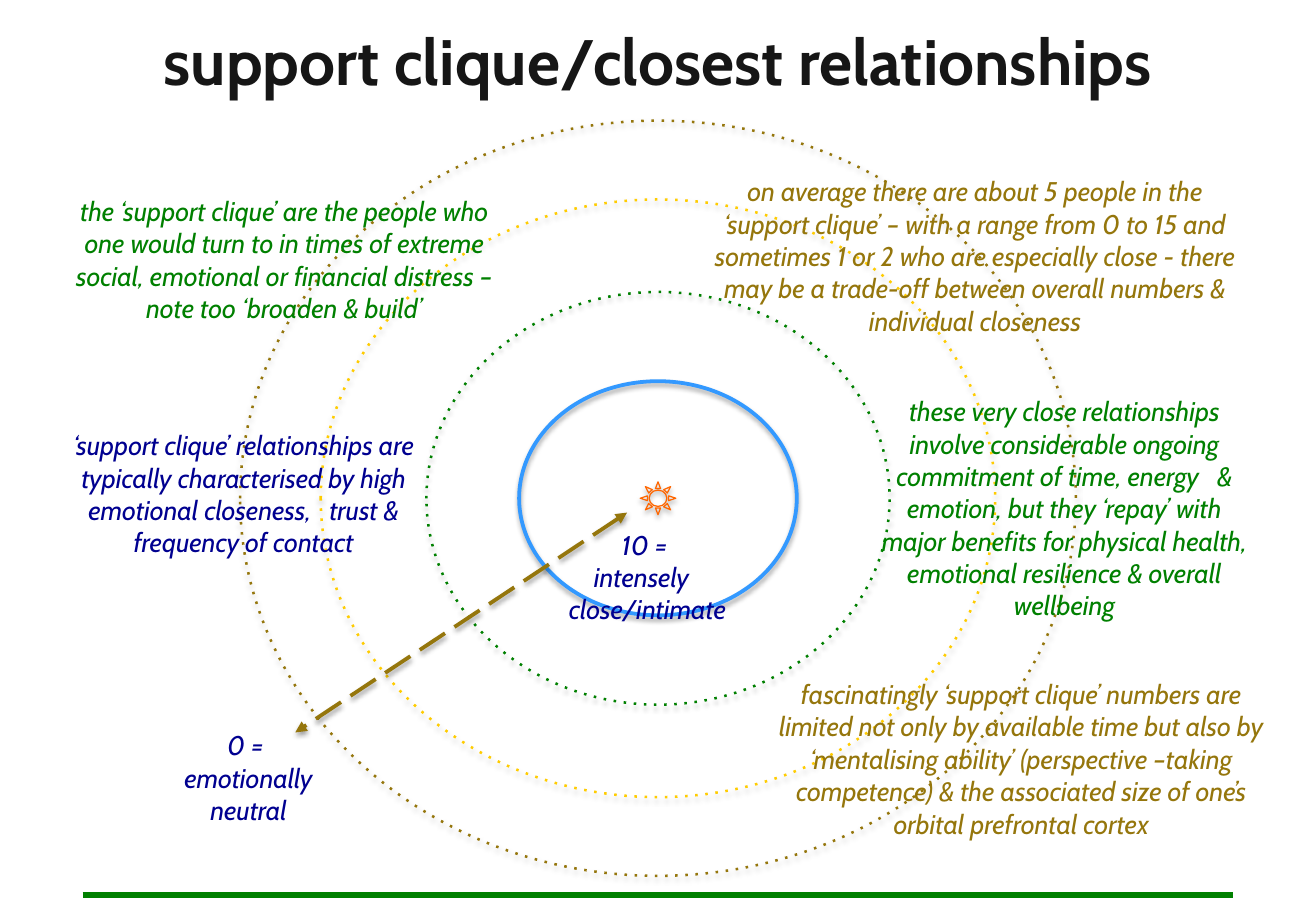
from dataclasses import dataclass

from lxml import etree
from pptx import Presentation
from pptx.dml.color import RGBColor
from pptx.enum.shapes import MSO_CONNECTOR, MSO_SHAPE
from pptx.enum.text import MSO_ANCHOR, MSO_AUTO_SIZE, PP_ALIGN
from pptx.oxml.ns import qn
from pptx.util import Emu, Inches, Pt

OVAL, SUN = MSO_SHAPE.OVAL, MSO_SHAPE.SUN
STRAIGHT = MSO_CONNECTOR.STRAIGHT
CENTER, BOTTOM = PP_ALIGN.CENTER, MSO_ANCHOR.BOTTOM
FIT_SHAPE, NO_FIT = MSO_AUTO_SIZE.SHAPE_TO_FIT_TEXT, MSO_AUTO_SIZE.NONE
TITLE_ONLY = 5


@dataclass(frozen=True)
class Theme:
    """Colours, font and type sizes of the slide."""
    font: str = "Cabin"
    title_size: float = 38
    note_size: float = 16
    ink: str = "161616"
    navy: str = "000090"
    green: str = "008000"
    bronze: str = "95760C"
    yellow: str = "FFCC00"
    blue: str = "3399FF"
    orange: str = "FF6600"


class RelationshipSlide:
    """Draws elements placed by percentages of the slide's width and height."""

    def __init__(self, deck, theme):
        """Open a title-only slide in the deck."""
        self.deck, self.theme = deck, theme
        self.slide = deck.slides.add_slide(deck.slide_layouts[TITLE_ONLY])

    def place(self, *shares):
        """Turn alternating x and y percentages into lengths."""
        sides = (self.deck.slide_width, self.deck.slide_height)
        return [Emu(round(share * sides[i % 2] / 100)) for i, share in enumerate(shares)]

    def fill_text(self, frame, lines, size, color, bold=False, italic=False):
        """Fill a text frame with centred paragraphs."""
        frame.word_wrap = True
        frame.text = "\n".join(lines)
        for paragraph in frame.paragraphs:
            paragraph.alignment = CENTER
            font = paragraph.font
            font.name, font.size = self.theme.font, Pt(size)
            font.color.rgb = RGBColor.from_string(color)
            font.bold, font.italic = bold, italic

    def title(self, heading):
        """Move and format the title placeholder."""
        title = self.slide.shapes.title
        title.left, title.top, title.width, title.height = self.place(0, 2.8, 100, 8.67)
        self.fill_text(title.text_frame, [heading], self.theme.title_size,
                       self.theme.ink, bold=True)
        title.text_frame.vertical_anchor = BOTTOM
        title.text_frame.auto_size = NO_FIT

    def note(self, box, color, *lines):
        """Add an italic note."""
        frame = self.slide.shapes.add_textbox(*self.place(*box)).text_frame
        self.fill_text(frame, lines, self.theme.note_size, color, italic=True)
        frame.auto_size = FIT_SHAPE

    def stroke(self, element, color, weight, dash=None, arrows=False, shadow=None):
        """Style an outline with its dash, arrowheads and (opacity, distance) shadow."""
        element.line.color.rgb = RGBColor.from_string(color)
        element.line.width = Pt(weight)
        properties = element._element.spPr
        outline = properties.find(qn("a:ln"))
        if dash:
            etree.SubElement(outline, qn("a:prstDash"), val=dash)
        if arrows:
            for end in ("a:headEnd", "a:tailEnd"):
                etree.SubElement(outline, qn(end), type="triangle")
        effects = etree.SubElement(properties, qn("a:effectLst"))
        if shadow:
            opacity, distance = shadow
            cast = etree.SubElement(effects, qn("a:outerShdw"), blurRad=str(Pt(3.1)),
                                    dist=str(Pt(distance)), dir="5400000", rotWithShape="0")
            shade = etree.SubElement(cast, qn("a:srgbClr"), val="000000")
            etree.SubElement(shade, qn("a:alpha"), val=str(opacity * 1000))

    def ring(self, width, height, color, weight, dash=None, kind=OVAL):
        """Add an unfilled shape around the common centre."""
        center_x, center_y = 50, 54.7
        box = self.place(center_x - width / 2, center_y - height / 2, width, height)
        ring = self.slide.shapes.add_shape(kind, *box)
        ring.fill.background()
        self.stroke(ring, color, weight, dash, shadow=(35, 1.8))

    def line(self, ends, color, weight, **style):
        """Add a straight line."""
        line = self.slide.shapes.add_connector(STRAIGHT, *self.place(*ends))
        self.stroke(line, color, weight, **style)


def main():
    """Build and save the slide."""
    theme = Theme()
    deck = Presentation()
    deck.slide_width, deck.slide_height = Inches(10.83), Inches(7.5)
    page = RelationshipSlide(deck, theme)

    page.title("support clique/closest relationships")
    page.ring(63.5, 82.9, theme.bronze, 1.5, "dot")
    page.ring(21.1, 25.7, theme.blue, 2.25)
    page.ring(2.7, 3.6, theme.orange, 0.75, kind=SUN)
    page.ring(35.2, 45.3, theme.green, 1.5, "dot")
    page.ring(51.25, 65.6, theme.yellow, 1.5, "dot")
    page.line((6.28, 98.27, 93.72, 98.27), theme.green, 3.25)
    page.line((47.65, 56.27, 22.44, 80.4), theme.bronze, 2.25,
              dash="lgDash", arrows=True, shadow=(38, 1.6))

    page.note((10.62, 79.33, 16.53, 12.13), theme.navy, "0 = ", "emotionally neutral")
    page.note((39.7, 57.33, 19.02, 12.13), theme.navy, "10 = ", "intensely   close/intimate")
    page.note((53.09, 18.53, 42.01, 19.33), theme.bronze,
              "on average there are about 5 people in the ‘support clique’ – with a range "
              "from 0 to 15 and sometimes 1 or 2 who are especially close - there may be a "
              "trade-off between overall numbers & individual closeness")
    page.note((65.93, 42.67, 29.92, 26.53), theme.green,
              "these very close relationships involve considerable ongoing commitment of "
              "time, energy   & emotion, but they ‘repay’ with major benefits for physical "
              "health, emotional resilience & overall wellbeing")
    page.note((3.51, 46.4, 30.01, 15.73), theme.navy,
              "‘support clique’ relationships are typically characterised by high "
              "emotional closeness,   trust & frequency of contact")
    page.note((57.99, 73.73, 39.24, 19.33), theme.bronze,
              "fascinatingly ‘support clique’ numbers are limited not only by available "
              "time but also by ‘mentalising ability’ (perspective –taking competence) & "
              "the associated size of one’s orbital prefrontal cortex")
    page.note((3.51, 20.67, 36.2, 15.73), theme.green,
              "the ‘support clique’ are the people who one would turn to in times of "
              "extreme social, emotional or financial distress – note too ‘broaden & build’")

    deck.save("out.pptx")


if __name__ == "__main__":
    main()
